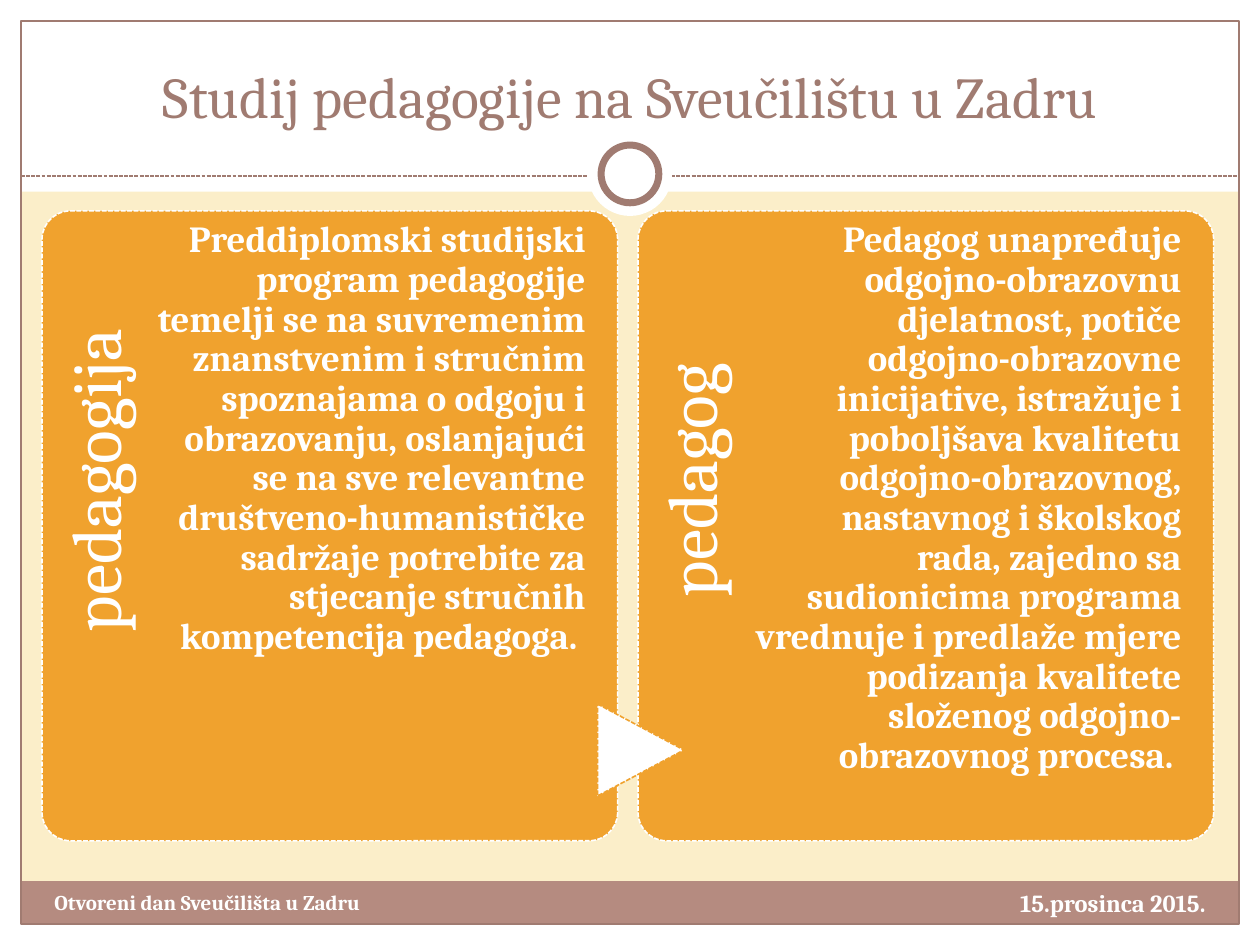
import pptx
import pptx.util
import pptx.dml.color
import pptx.enum.dml
import pptx.enum.shapes
import pptx.enum.text
import pptx.oxml.ns
import lxml.etree

Pt = pptx.util.Pt
Kind = pptx.enum.shapes.MSO_SHAPE
Align = pptx.enum.text.PP_ALIGN
Anchor = pptx.enum.text.MSO_ANCHOR

FONT = "Cambria"
HUES = {"cream": "FBEEC9", "white": "FFFFFF", "rose": "B58B80",
        "brown": "A07B71", "gold": "F0A22E"}
WIDE, HIGH, EDGE = 720, 540, 12
TITLE = "Studij pedagogije na Sveučilištu u Zadru"
PANELS = [
    ("pedagogija",
     "Preddiplomski studijski program pedagogije temelji se na suvremenim "
     "znanstvenim i stručnim spoznajama o odgoju i obrazovanju, oslanjajući "
     "se na sve relevantne društveno-humanističke sadržaje potrebite za "
     "stjecanje stručnih kompetencija pedagoga. "),
    ("pedagog",
     "Pedagog unapređuje odgojno-obrazovnu djelatnost, potiče "
     "odgojno-obrazovne inicijative, istražuje i poboljšava kvalitetu "
     "odgojno-obrazovnog, nastavnog i školskog rada, zajedno sa sudionicima "
     "programa vrednuje i predlaže mjere podizanja kvalitete složenog "
     "odgojno-obrazovnog procesa. "),
]
NOTES = [
    ("15.prosinca 2015.", (456, 504, 240, 29), 14, Align.RIGHT),
    ("Otvoreni dan Sveučilišta u Zadru", (24, 505, 282, 29), 12, Align.LEFT),
]
BANDS = [
    ((0, HIGH - EDGE, WIDE, EDGE), "white"),
    ((0, 0, WIDE, 109.5), "white"),
    ((0, 0, EDGE, HIGH), "white"),
    ((WIDE - EDGE, 0, EDGE, HIGH), "white"),
    ((EDGE, 503.5, WIDE - 2 * EDGE, 24.5), "rose"),
]
LEFT, TOP, STEP = 24, 120.5, 340.6
CARD_W, CARD_H = 329, 360
RING_X, RING_Y = 360, 99.4


def hue(name):
    return pptx.dml.color.RGBColor.from_string(HUES[name])


def stroke(line, name, width, dash=False):
    line.color.rgb = hue(name)
    line.width = Pt(width)
    if dash:
        line.dash_style = pptx.enum.dml.MSO_LINE.SQUARE_DOT


def draw(kind, box, fill=None, line=None, width=0.75, dash=False):
    shape = slide.shapes.add_shape(kind, *map(Pt, box))
    shape.shadow.inherit = False
    if fill:
        shape.fill.solid()
        shape.fill.fore_color.rgb = hue(fill)
    else:
        shape.fill.background()
    if line:
        stroke(shape.line, line, width, dash)
    else:
        shape.line.fill.background()
    return shape


def style(frame, text, size, align, name="white", bold=False, space=None):
    frame.text = text
    frame.word_wrap = True
    part = frame.paragraphs[0]
    part.alignment = align
    part.line_spacing = space
    font = part.runs[0].font
    font.name, font.size, font.bold = FONT, Pt(size), bold
    font.color.rgb = hue(name)


def write(box, text, size, align, inset=None, **look):
    shape = slide.shapes.add_textbox(*map(Pt, box))
    frame = shape.text_frame
    style(frame, text, size, align, **look)
    if inset:
        (frame.margin_left, frame.margin_top,
         frame.margin_right, frame.margin_bottom) = map(Pt, inset)
    return shape


deck = pptx.Presentation()
deck.slide_width, deck.slide_height = Pt(WIDE), Pt(HIGH)
slide = deck.slides.add_slide(deck.slide_layouts[5])
back = slide.background.fill
back.solid()
back.fore_color.rgb = hue("cream")

for box, fill in BANDS:
    draw(Kind.RECTANGLE, box, fill)
draw(Kind.RECTANGLE, (EDGE, EDGE, WIDE - 2 * EDGE, HIGH - 2 * EDGE),
     line="brown")
rule = slide.shapes.add_connector(
    pptx.enum.shapes.MSO_CONNECTOR.STRAIGHT,
    *map(Pt, (EDGE, 100.6, WIDE - EDGE, 100.6)))
stroke(rule.line, "brown", 0.75, True)
lxml.etree.SubElement(rule.element.spPr, pptx.oxml.ns.qn("a:effectLst"))
for size, line in ((48, None), (33, "brown")):
    draw(Kind.OVAL, (RING_X - size / 2, RING_Y - size / 2, size, size),
         "white", line, 4)

title = slide.shapes.title
title.left, title.top, title.width, title.height = map(Pt, (24, 18, 672, 60))
style(title.text_frame, TITLE, 33, Align.CENTER, "brown")
title.text_frame.vertical_anchor = Anchor.BOTTOM
slide.shapes.element.append(title.element)

for spot, (label, text) in enumerate(PANELS):
    left = LEFT + spot * STEP
    card = draw(Kind.ROUNDED_RECTANGLE, (left, TOP, CARD_W, CARD_H),
                "gold", "white", 0.9, True)
    card.adjustments[0] = 0.05
    side = write((left - 114.7, 234.7, 295.2, 65.8), label, 40, Align.CENTER,
                 (0, 10.8, 13.7, 0), space=0.9)
    side.rotation = 270
    if spot:
        arrow = draw(Kind.FLOWCHART_EXTRACT, (339.8, 403.9, 52.6, 49.4),
                     "white", "gold", 0.9, True)
        arrow.rotation = 90
    write((left + 65.5, TOP, 245, CARD_H), text, 21, Align.RIGHT,
          (0, 5.8, 0, 0), bold=True, space=0.9)

for text, box, size, align in NOTES:
    write(box, text, size, align, bold=True)

deck.save("out.pptx")
